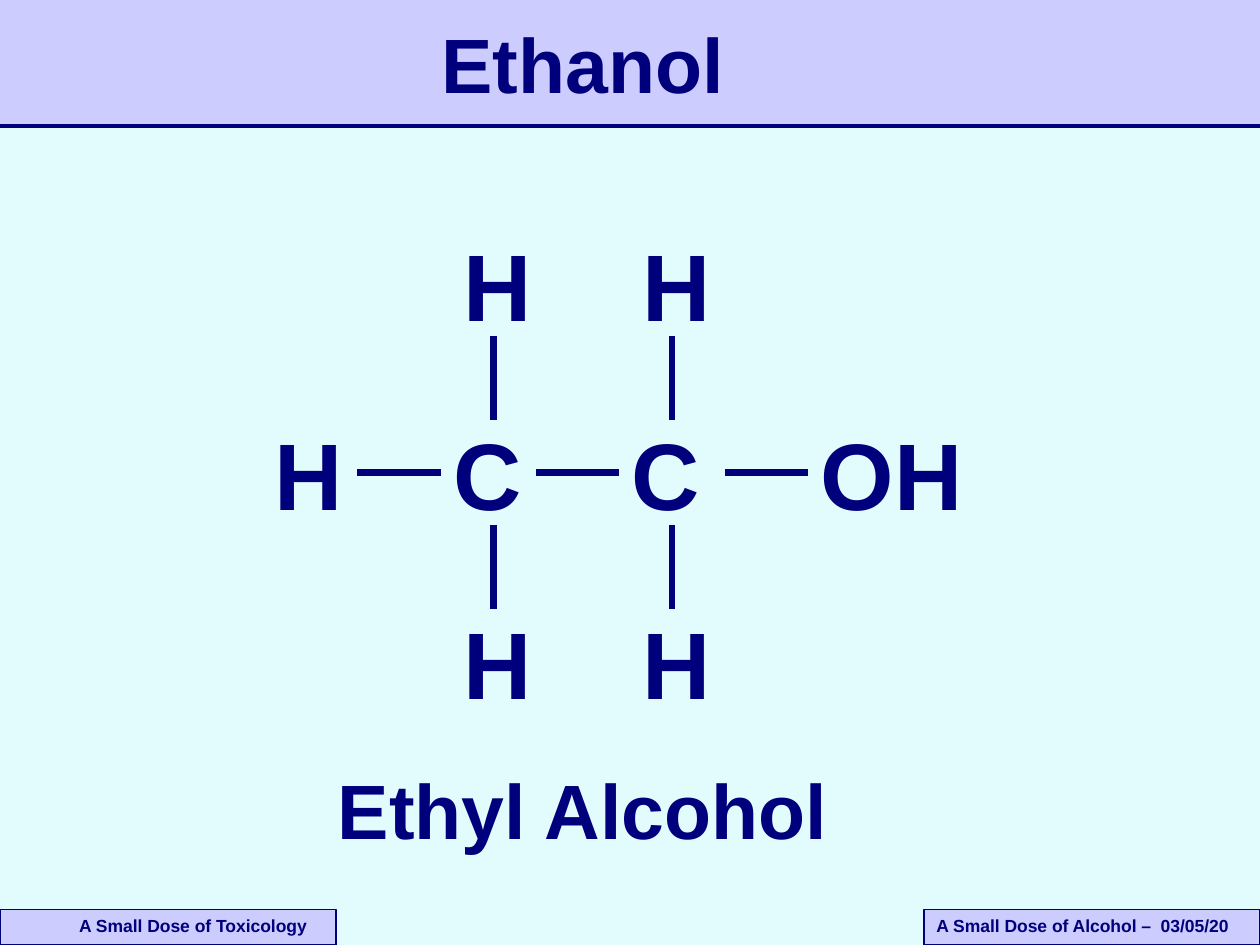
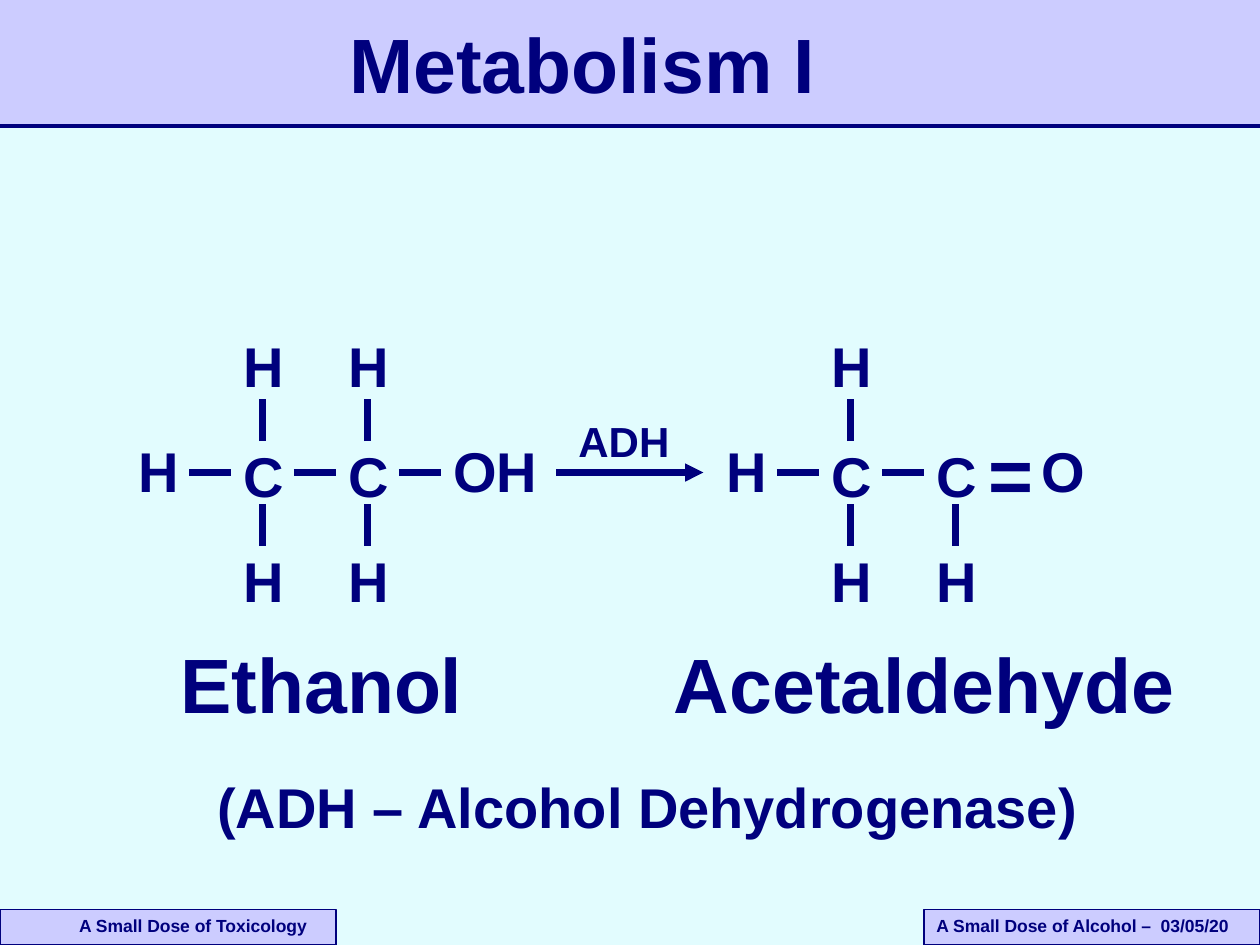
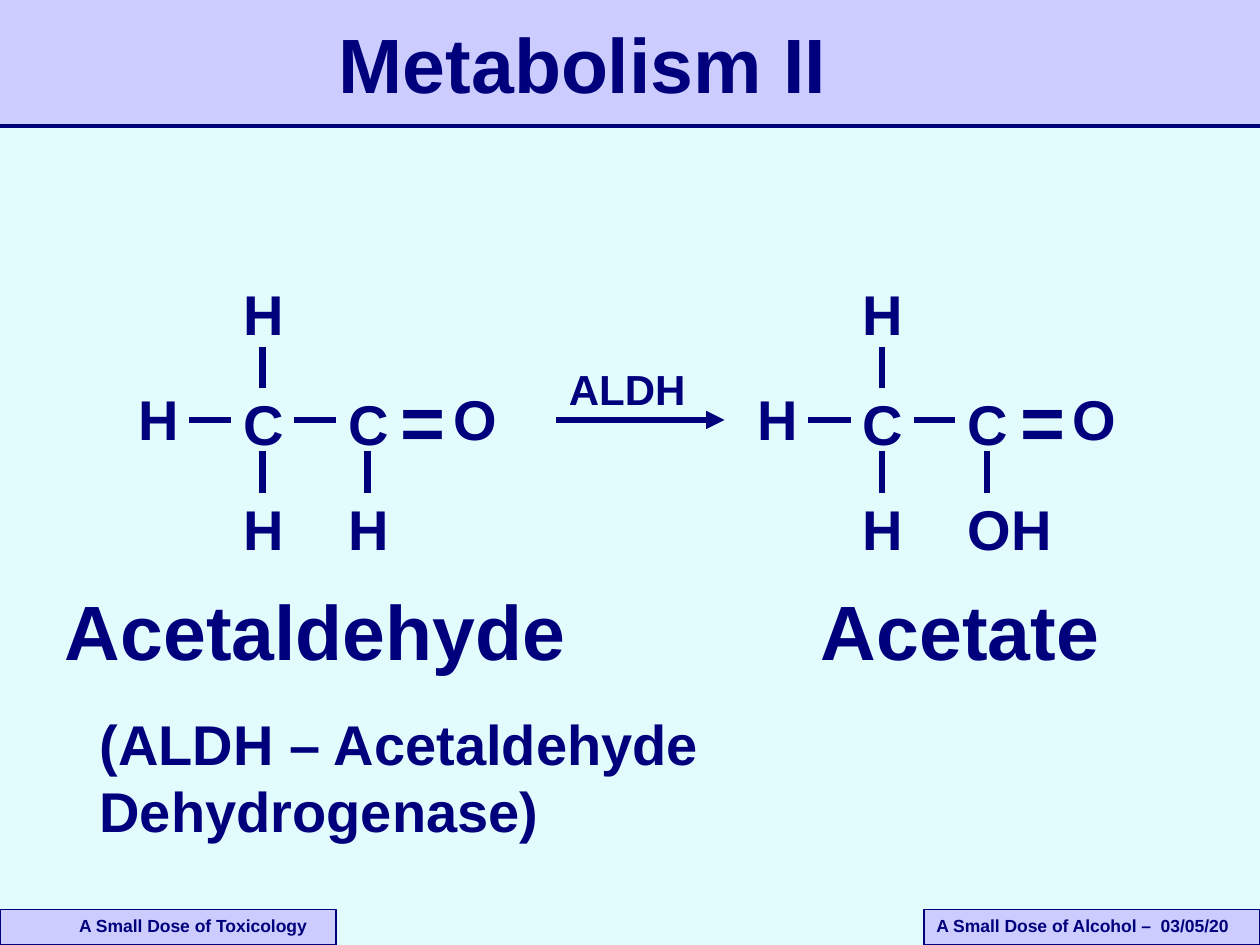
"""Build three slides on the chemistry of ethanol metabolism."""

from dataclasses import dataclass
from typing import Optional

from lxml.etree import SubElement
from pptx import Presentation
from pptx.dml.color import RGBColor
from pptx.enum.shapes import MSO_CONNECTOR, MSO_SHAPE
from pptx.enum.text import MSO_ANCHOR, MSO_AUTO_SIZE, PP_ALIGN
from pptx.oxml.ns import qn
from pptx.shapes.autoshape import Shape
from pptx.slide import Slide
from pptx.util import Inches, Pt

SLIDE_WIDTH = Inches(10)
SLIDE_HEIGHT = Inches(7.5)
COLUMNS = 120
ROWS = 90


@dataclass(frozen=True)
class Theme:
    """Colours, font, type sizes and line widths."""

    ink: RGBColor = RGBColor(0x00, 0x00, 0x7D)
    band: RGBColor = RGBColor(0xCC, 0xCC, 0xFF)
    background: RGBColor = RGBColor(0xE2, 0xFC, 0xFE)
    font: str = "Arial"
    heading: float = 44
    caption: float = 32
    enzyme: float = 24
    footer: float = 10
    bond: float = 3.5
    rule: float = 2
    border: float = 0.75


THEME = Theme()


@dataclass(frozen=True)
class Label:
    """A line of text placed on the grid."""

    text: str
    left: float
    top: float
    width: float
    size: float = THEME.heading
    wrap: bool = False


@dataclass(frozen=True)
class Footer:
    """A boxed footer with an indent or a tab stop in inches."""

    text: str
    left: float
    indent: float = 0
    tab_stop: float = 0


@dataclass(frozen=True)
class Scale:
    """Grid offsets of a structural formula, measured from its left end and axis."""

    size: float
    chain: tuple[float, ...]
    widths: dict[str, float]
    hydrogen_top: float
    carbon_top: float
    above_top: float
    below_top: float
    branch_shift: float
    stem: float
    stem_gap: float
    bond: float


LARGE = Scale(54, (0, 17, 34, 52), {"H": 9, "C": 9.6, "OH": 16}, -6, -6, -24, 12, 1, 5, 5, 8)
SMALL = Scale(THEME.caption, (0, 10, 20, 30), {"H": 6, "C": 6, "O": 7, "OH": 11},
              -4, -3.5, -14, 6.5, 0, 3, 3, 4)


@dataclass(frozen=True)
class Molecule:
    """A chain of atoms with branches on its two carbons."""

    left: float
    axis: float
    end: str
    above: tuple[str, ...]
    below: tuple[str, ...] = ("H", "H")
    scale: Scale = SMALL
    double_bond: bool = False


@dataclass(frozen=True)
class Arrow:
    """A horizontal reaction arrow."""

    start: float
    end: float
    row: float


@dataclass(frozen=True)
class Page:
    """The content of one slide."""

    title: str
    molecules: tuple[Molecule, ...]
    labels: tuple[Label, ...]
    arrow: Optional[Arrow] = None


FOOTERS = (
    Footer("A Small Dose of Toxicology", 0, indent=0.53),
    Footer("A Small Dose of Alcohol –\t03/05/20", 88, tab_stop=1.78),
)

PAGES = (
    Page(
        "Ethanol",
        (Molecule(25, 45, "OH", ("H", "H"), scale=LARGE),),
        (Label("Ethyl Alcohol", 31, 72, 49.3),),
    ),
    Page(
        "Metabolism I",
        (
            Molecule(12, 45, "OH", ("H", "H")),
            Molecule(68, 45, "O", ("H",), double_bond=True),
        ),
        (
            Label("Ethanol", 16, 60, 29.3),
            Label("Acetaldehyde", 63, 60, 50.2),
            Label("(ADH – Alcohol Dehydrogenase)", 19.5, 73, 84.4, THEME.caption),
            Label("ADH", 53.9, 39, 11.2, THEME.enzyme),
        ),
        Arrow(53, 67, 45),
    ),
    Page(
        "Metabolism II",
        (
            Molecule(12, 40, "O", ("H",), double_bond=True),
            Molecule(71, 40, "O", ("H",), ("H", "OH"), double_bond=True),
        ),
        (
            Label("Acetaldehyde", 5, 55, 50.2),
            Label("Acetate", 77, 55, 28.9),
            Label("(ALDH – Acetaldehyde Dehydrogenase)", 8.3, 67, 99, THEME.caption, True),
            Label("ALDH", 53, 34, 13.6, THEME.enzyme),
        ),
        Arrow(53, 69, 40),
    ),
)


def across(columns: float) -> int:
    """Convert grid columns to a length."""
    return round(SLIDE_WIDTH * columns / COLUMNS)


def down(rows: float) -> int:
    """Convert grid rows to a length."""
    return round(SLIDE_HEIGHT * rows / ROWS)


def style_text(shape: Shape, size: float) -> None:
    """Apply the theme's font to every run of a shape."""
    for paragraph in shape.text_frame.paragraphs:
        for run in paragraph.runs:
            run.font.name = THEME.font
            run.font.size = Pt(size)
            run.font.bold = True
            run.font.color.rgb = THEME.ink


def draw_label(slide: Slide, label: Label) -> Shape:
    """Draw a text box as high as one line of its type size."""
    height = label.size * 0.2 + 1.2
    shape = slide.shapes.add_textbox(
        across(label.left), down(label.top), across(label.width), down(height))
    shape.text_frame.text = label.text
    shape.text_frame.word_wrap = label.wrap
    shape.text_frame.auto_size = MSO_AUTO_SIZE.SHAPE_TO_FIT_TEXT
    style_text(shape, label.size)
    return shape


def draw_line(slide: Slide, start: tuple[float, float], end: tuple[float, float],
              width: float = THEME.bond, arrowhead: bool = False) -> None:
    """Draw a straight line between two grid points."""
    connector = slide.shapes.add_connector(
        MSO_CONNECTOR.STRAIGHT,
        across(start[0]), down(start[1]), across(end[0]), down(end[1]))
    connector.line.color.rgb = THEME.ink
    connector.line.width = Pt(width)
    properties = connector.element.spPr
    if arrowhead:
        SubElement(properties.find(qn("a:ln")), qn("a:tailEnd"), type="triangle")
    SubElement(properties, qn("a:effectLst"))


def draw_panel(slide: Slide, left: float, top: float, width: float, height: float) -> Shape:
    """Draw a rectangle in the band colour without an outline."""
    shape = slide.shapes.add_shape(
        MSO_SHAPE.RECTANGLE, across(left), down(top), across(width), down(height))
    shape.shadow.inherit = False
    shape.fill.solid()
    shape.fill.fore_color.rgb = THEME.band
    shape.line.fill.background()
    return shape


def draw_footer(slide: Slide, footer: Footer) -> None:
    """Draw one boxed footer at the bottom edge."""
    shape = draw_panel(slide, footer.left, 86.6, 32, 3.4)
    shape.line.color.rgb = THEME.ink
    shape.line.width = Pt(THEME.border)
    shape.text_frame.text = footer.text
    shape.text_frame.vertical_anchor = MSO_ANCHOR.TOP
    paragraph = shape.text_frame.paragraphs[0]
    paragraph.alignment = PP_ALIGN.LEFT
    properties = paragraph._p.get_or_add_pPr()
    if footer.indent:
        properties.set("marL", str(Inches(footer.indent)))
        properties.set("indent", "0")
    if footer.tab_stop:
        tabs = SubElement(properties, qn("a:tabLst"))
        SubElement(tabs, qn("a:tab"), pos=str(Inches(footer.tab_stop)), algn="l")
    style_text(shape, THEME.footer)


def draw_frame(slide: Slide, title: str) -> None:
    """Draw the background, title band and footers."""
    slide.background.fill.solid()
    slide.background.fill.fore_color.rgb = THEME.background
    draw_panel(slide, 0, 0, COLUMNS, 12)
    draw_line(slide, (0, 12), (COLUMNS, 12), THEME.rule)
    for footer in FOOTERS:
        draw_footer(slide, footer)
    heading = draw_label(slide, Label(title, 13, 1, 85, wrap=True))
    heading.text_frame.vertical_anchor = MSO_ANCHOR.MIDDLE
    heading.text_frame.paragraphs[0].alignment = PP_ALIGN.CENTER


def draw_atom(slide: Slide, scale: Scale, symbol: str, left: float, top: float) -> None:
    """Draw one atom or group of a formula."""
    draw_label(slide, Label(symbol, left, top, scale.widths[symbol], scale.size, True))


def draw_branches(slide: Slide, molecule: Molecule, carbons: list[float],
                  symbols: tuple[str, ...], top: float, direction: int) -> None:
    """Draw the atoms and upright bonds on one side of the carbons."""
    scale = molecule.scale
    near = molecule.axis + direction * scale.stem_gap
    far = near + direction * scale.bond
    for symbol, left in zip(symbols, carbons):
        draw_atom(slide, scale, symbol, left + scale.branch_shift, molecule.axis + top)
        draw_line(slide, (left + scale.stem, near), (left + scale.stem, far))


def draw_molecule(slide: Slide, molecule: Molecule) -> None:
    """Draw a structural formula."""
    scale, axis = molecule.scale, molecule.axis
    lefts = [molecule.left + offset for offset in scale.chain]
    symbols = ("H", "C", "C", molecule.end)
    for symbol, left in zip(symbols, lefts):
        top = scale.carbon_top if symbol == "C" else scale.hydrogen_top
        draw_atom(slide, scale, symbol, left, axis + top)
    single_bonds = lefts[1:3] if molecule.double_bond else lefts[1:]
    for left in single_bonds:
        draw_line(slide, (left - scale.bond, axis), (left, axis))
    if molecule.double_bond:
        draw_label(slide, Label("=", lefts[2] + 5, axis - 5, 6.7))
    carbons = lefts[1:3]
    draw_branches(slide, molecule, carbons, molecule.above, scale.above_top, -1)
    draw_branches(slide, molecule, carbons, molecule.below, scale.below_top, 1)


def draw_page(slide: Slide, page: Page) -> None:
    """Draw one whole slide."""
    draw_frame(slide, page.title)
    for molecule in page.molecules:
        draw_molecule(slide, molecule)
    for label in page.labels:
        draw_label(slide, label)
    if page.arrow:
        draw_line(slide, (page.arrow.start, page.arrow.row),
                  (page.arrow.end, page.arrow.row), arrowhead=True)


def main() -> None:
    """Build and save the presentation."""
    presentation = Presentation()
    presentation.slide_width = SLIDE_WIDTH
    presentation.slide_height = SLIDE_HEIGHT
    blank_layout = presentation.slide_layouts[6]
    for page in PAGES:
        draw_page(presentation.slides.add_slide(blank_layout), page)
    presentation.save("out.pptx")


if __name__ == "__main__":
    main()
